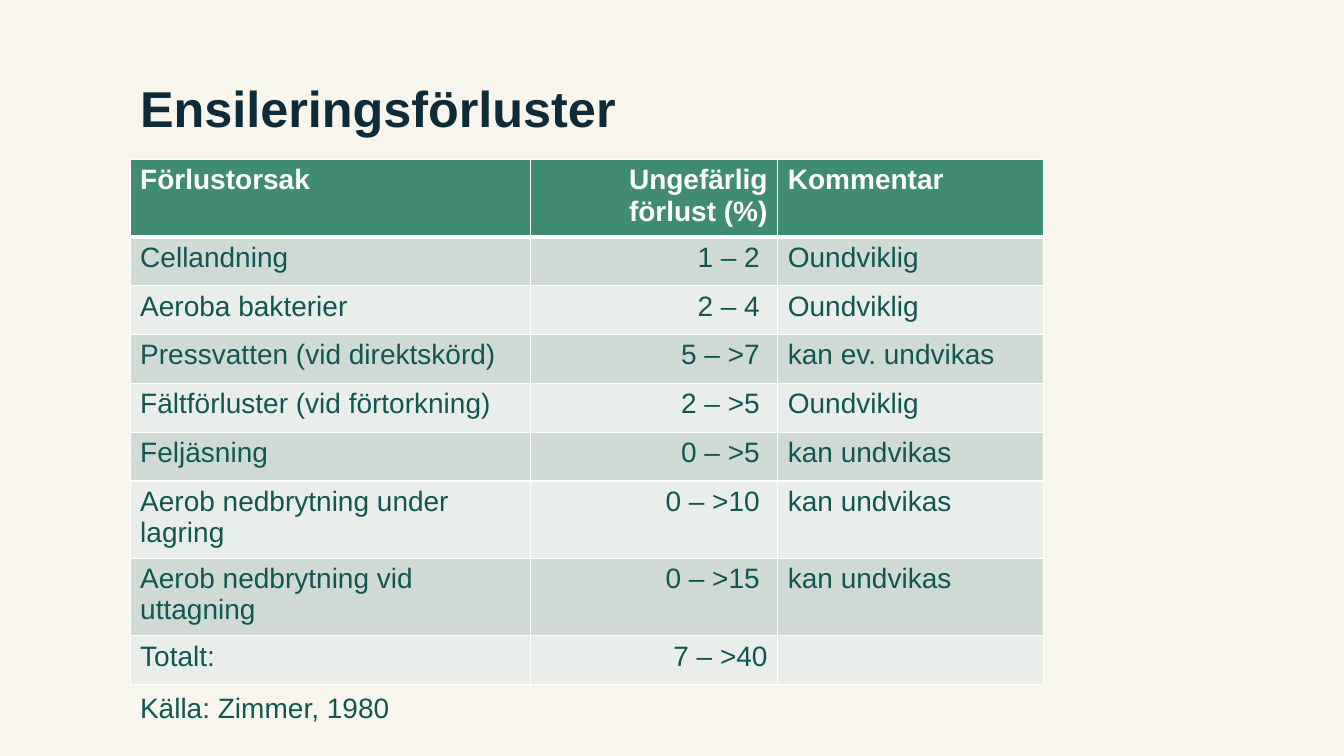
from dataclasses import dataclass

from lxml.etree import SubElement
from pptx import Presentation
from pptx.dml.color import RGBColor as Rgb
from pptx.enum.text import MSO_ANCHOR as Anchor, PP_ALIGN as Align
from pptx.oxml.ns import qn
from pptx.util import Cm, Pt


@dataclass(frozen=True)
class Theme:
    font: str = "Arial"
    background: str = "F8F5ED"
    title: str = "0D2B38"
    body: str = "105653"
    header: str = "418B73"
    white: str = "FFFFFF"
    bands: tuple = ("CFDAD5", "E9EEEB")
    title_size: int = 36
    body_size: int = 20
    thin: int = 1
    thick: int = 3


THEME = Theme()
LEFT = Cm(3.28)
COLUMN_WIDTHS = (Cm(10.09), Cm(6.23), Cm(6.69))
ROW_HEIGHT = Cm(1.23)
COLUMN_ALIGNS = (Align.LEFT, Align.RIGHT, Align.LEFT)
HEADINGS = ("Förlustorsak", "Ungefärlig förlust (%)", "Kommentar")
LOSSES = (
    ("Cellandning", "1 – 2 ", "Oundviklig"),
    ("Aeroba bakterier", "2 – 4 ", "Oundviklig"),
    ("Pressvatten (vid direktskörd)", "5 – >7 ", "kan ev. undvikas"),
    ("Fältförluster (vid förtorkning)", "2 – >5 ", "Oundviklig"),
    ("Feljäsning", "0 – >5 ", "kan undvikas"),
    ("Aerob nedbrytning under lagring", "0 – >10 ", "kan undvikas"),
    ("Aerob nedbrytning vid uttagning", "0 – >15 ", "kan undvikas"),
    ("Totalt:", "7 – >40", ""),
)


def write_text(frame, text, *, color=THEME.body, size=THEME.body_size,
               bold=False, align=Align.LEFT, line_spacing=None):
    paragraph = frame.paragraphs[0]
    paragraph.alignment = align
    if line_spacing:
        paragraph.line_spacing = line_spacing
    if not text:
        return
    run = paragraph.add_run()
    run.text = text
    run.font.name = THEME.font
    run.font.size = Pt(size)
    run.font.bold = bold
    run.font.color.rgb = Rgb.from_string(color)


def add_text_box(slide, text, top, width, height, *, anchor, wrap, **text_format):
    frame = slide.shapes.add_textbox(LEFT, top, width, height).text_frame
    frame.word_wrap = wrap
    frame.vertical_anchor = anchor
    write_text(frame, text, **text_format)
    return frame


def set_borders(cell, top, bottom):
    """Draw white cell borders; top and bottom widths are in points."""
    properties = cell._tc.get_or_add_tcPr()
    widths = {"a:lnL": THEME.thin, "a:lnR": THEME.thin,
              "a:lnT": top, "a:lnB": bottom}
    for tag, width in widths.items():
        line = SubElement(properties, qn(tag), w=str(Pt(width)))
        fill = SubElement(line, qn("a:solidFill"))
        SubElement(fill, qn("a:srgbClr"), val=THEME.white)


def add_loss_table(slide):
    rows = (HEADINGS, *LOSSES)
    table = slide.shapes.add_table(
        len(rows), len(HEADINGS), LEFT, Cm(4.02),
        sum(COLUMN_WIDTHS), ROW_HEIGHT * len(rows)).table
    for column, width in zip(table.columns, COLUMN_WIDTHS):
        column.width = width
    for index, entries in enumerate(rows):
        table.rows[index].height = ROW_HEIGHT
        is_header = index == 0
        background = THEME.header if is_header else THEME.bands[(index - 1) % 2]
        for cell, entry, align in zip(table.rows[index].cells, entries, COLUMN_ALIGNS):
            set_borders(cell, top=THEME.thick if index == 1 else THEME.thin,
                        bottom=THEME.thick if is_header else THEME.thin)
            cell.fill.solid()
            cell.fill.fore_color.rgb = Rgb.from_string(background)
            write_text(cell.text_frame, entry, bold=is_header, align=align,
                       color=THEME.white if is_header else THEME.body)


def main():
    deck = Presentation()
    deck.slide_width, deck.slide_height = Cm(33.87), Cm(19.05)
    slide = deck.slides.add_slide(deck.slide_layouts[6])
    slide.background.fill.solid()
    slide.background.fill.fore_color.rgb = Rgb.from_string(THEME.background)

    add_text_box(slide, "Ensileringsförluster", Cm(1.3), sum(COLUMN_WIDTHS), Cm(2.31),
                 anchor=Anchor.BOTTOM, wrap=True, color=THEME.title,
                 size=THEME.title_size, bold=True, line_spacing=0.9)
    add_loss_table(slide)
    source = add_text_box(slide, "Källa: Zimmer, 1980", Cm(17.27), Cm(6.86), Cm(0.99),
                          anchor=Anchor.MIDDLE, wrap=False)
    source.margin_bottom = 0
    deck.save("out.pptx")


if __name__ == "__main__":
    main()
